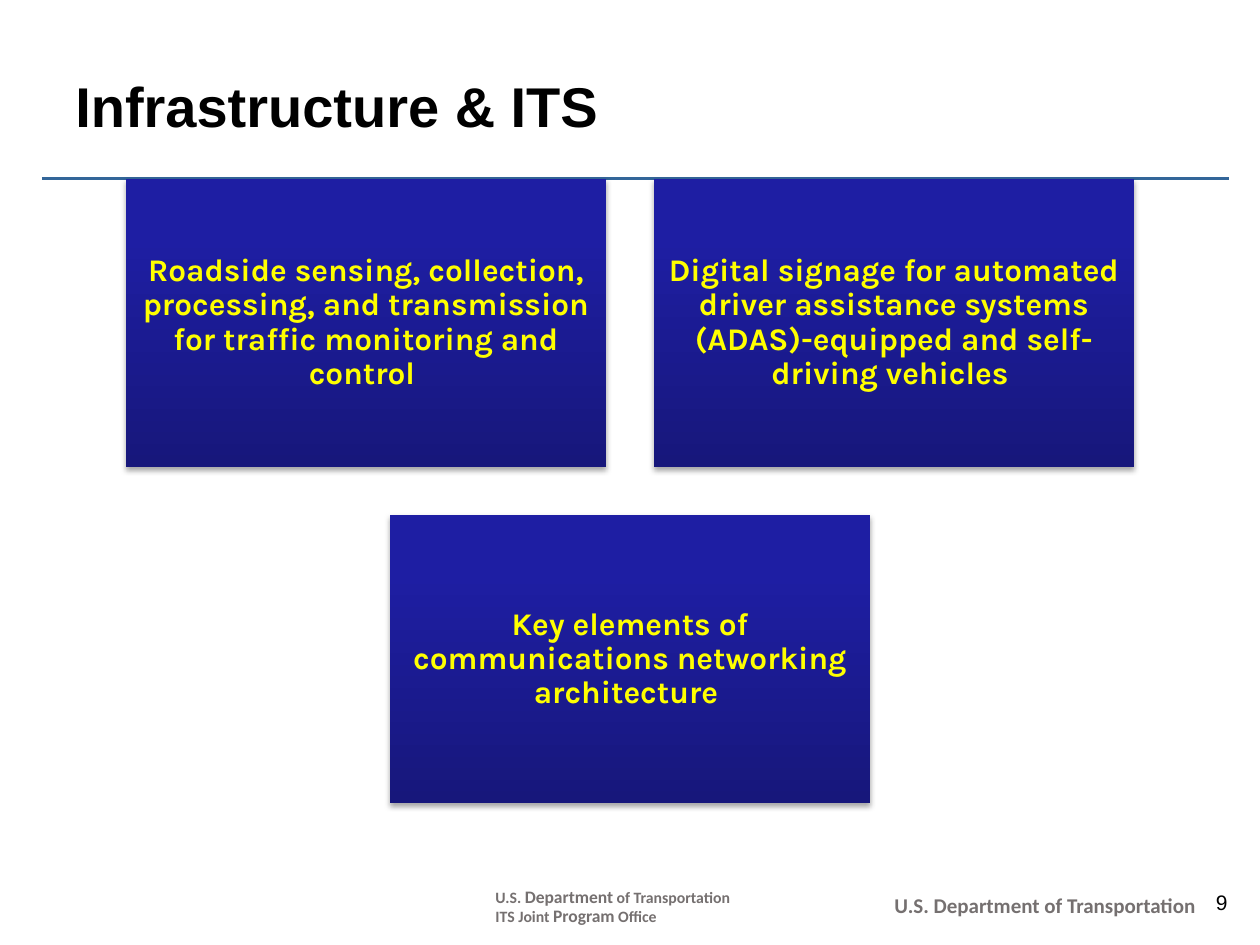
import pptx
import pptx.dml.color
import pptx.enum.shapes
import pptx.enum.text
import pptx.oxml
import pptx.oxml.ns
import pptx.util
from lxml import etree

Pt = pptx.util.Pt
ALIGN = pptx.enum.text.PP_ALIGN
ANCHOR = pptx.enum.text.MSO_ANCHOR

COLORS = {
    "rule": "336699",
    "title": "000000",
    "footer": "757070",
    "card_text": "FFFF00",
    "shadow": "000000",
    "card_bottom": "17177B",
    "card_middle": "1E1EA3",
    "card_top": "1C1CA5",
}
NAMESPACE = pptx.oxml.ns.nsdecls("a")
CARDS = [
    "Roadside sensing, collection, processing, and transmission "
    "for traffic monitoring and control ",
    "Digital signage for automated driver assistance systems "
    "(ADAS)-equipped and self-driving vehicles ",
    "Key elements of communications networking architecture ",
]


def color(name):
    return pptx.dml.color.RGBColor.from_string(COLORS[name])


def write(frame, paragraphs, font, color_name, bold=True, align=ALIGN.LEFT,
          spacing=1.0, anchor=ANCHOR.TOP, inset=(7.2, 3.6)):
    """Fill a text frame; each paragraph is a list of (text, size) runs."""
    frame.word_wrap = True
    frame.vertical_anchor = anchor
    frame.margin_left = frame.margin_right = Pt(inset[0])
    frame.margin_top = frame.margin_bottom = Pt(inset[1])
    for index, runs in enumerate(paragraphs):
        para = frame.add_paragraph() if index else frame.paragraphs[0]
        para.alignment = align
        para.line_spacing = spacing
        for text, size in runs:
            span = para.add_run()
            span.text = text
            span.font.name = font
            span.font.size = Pt(size)
            span.font.bold = bold
            span.font.color.rgb = color(color_name)


def add_text(page, left, top, width, height, paragraphs, *args, **options):
    box = page.shapes.add_textbox(Pt(left), Pt(top), Pt(width), Pt(height))
    write(box.text_frame, paragraphs, *args, **options)


def add_rule(page, left, top, width):
    line = page.shapes.add_connector(
        pptx.enum.shapes.MSO_CONNECTOR.STRAIGHT,
        Pt(left), Pt(top), Pt(left + width), Pt(top))
    line.line.color.rgb = color("rule")
    line.line.width = Pt(1.5)
    etree.SubElement(line._element.spPr, pptx.oxml.ns.qn("a:effectLst"))


def add_footer(page, left, top, width):
    """Place the office name, department name and page number."""
    office = [
        [("U.S. ", 9), ("Department", 10), (" of Transportation", 9)],
        [("ITS Joint ", 9), ("Program", 10), (" Office", 9)],
    ]
    add_text(page, left, top, 149, 26, office, "Calibri", "footer", spacing=0.9)
    add_text(page, left + 228, top + 6, 198, 17,
             [[("U.S. Department of Transportation", 12)]],
             "Calibri", "footer", spacing=0.75)
    add_text(page, left + width - 30, top + 0.5, 30, 22, [[("9", 12)]],
             "Arial", "title", bold=False, align=ALIGN.RIGHT)


def add_card(page, left, top, width, height, text):
    card = page.shapes.add_shape(
        pptx.enum.shapes.MSO_SHAPE.RECTANGLE,
        Pt(left), Pt(top), Pt(width), Pt(height))
    card.line.fill.background()
    stops = "".join(
        f'<a:gs pos="{percent * 1000}"><a:srgbClr val="{COLORS[name]}"/></a:gs>'
        for percent, name in
        [(0, "card_bottom"), (80, "card_middle"), (100, "card_top")])
    gradient = pptx.oxml.parse_xml(
        f'<a:gradFill {NAMESPACE} rotWithShape="1"><a:gsLst>{stops}</a:gsLst>'
        '<a:lin ang="16200000" scaled="0"/></a:gradFill>')
    shadow = pptx.oxml.parse_xml(
        f'<a:effectLst {NAMESPACE}><a:outerShdw blurRad="{Pt(3.1)}" '
        f'dist="{Pt(1.8)}" dir="5400000" rotWithShape="0">'
        f'<a:srgbClr val="{COLORS["shadow"]}"><a:alpha val="35000"/></a:srgbClr>'
        '</a:outerShdw></a:effectLst>')
    properties = card._element.spPr
    properties.find(pptx.oxml.ns.qn("a:prstGeom")).addnext(gradient)
    properties.append(shadow)
    write(card.text_frame, [[(text, 18)]], "Karla", "card_text",
          align=ALIGN.CENTER, spacing=0.9, anchor=ANCHOR.MIDDLE, inset=(5, 5))


def add_cards(page, left, top, width, texts, columns=2):
    """Lay the cards out in rows, each row centred in the given width."""
    card_width = width / (columns + 0.1 * (columns - 1))
    card_height = 0.6 * card_width
    gap = 0.1 * card_width
    for start in range(0, len(texts), columns):
        row = texts[start:start + columns]
        row_width = len(row) * (card_width + gap) - gap
        row_left = left + (width - row_width) / 2
        row_top = top + start // columns * (card_height + gap)
        for column, text in enumerate(row):
            add_card(page, row_left + column * (card_width + gap), row_top,
                     card_width, card_height, text)


def main():
    deck = pptx.Presentation()
    deck.slide_width, deck.slide_height = Pt(720), Pt(540)
    page = deck.slides.add_slide(deck.slide_layouts[6])
    add_rule(page, 24, 102, 678)
    add_footer(page, 276, 504, 432.5)
    add_text(page, 36, 30, 648, 60, [[("Infrastructure & ITS", 32)]],
             "Arial", "title", anchor=ANCHOR.MIDDLE)
    add_cards(page, 72, 102.2, 576, CARDS)
    deck.save("out.pptx")


if __name__ == "__main__":
    main()
